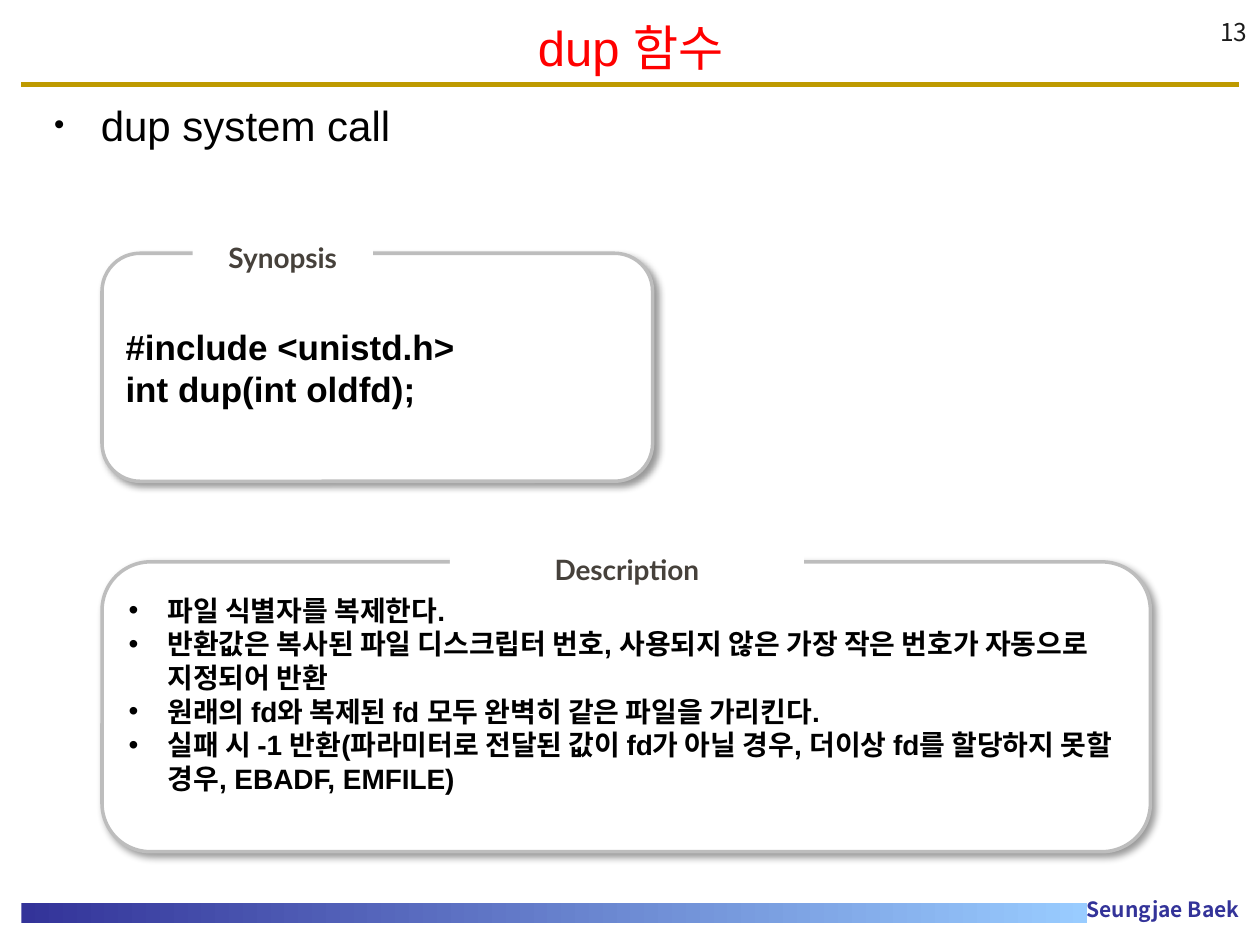
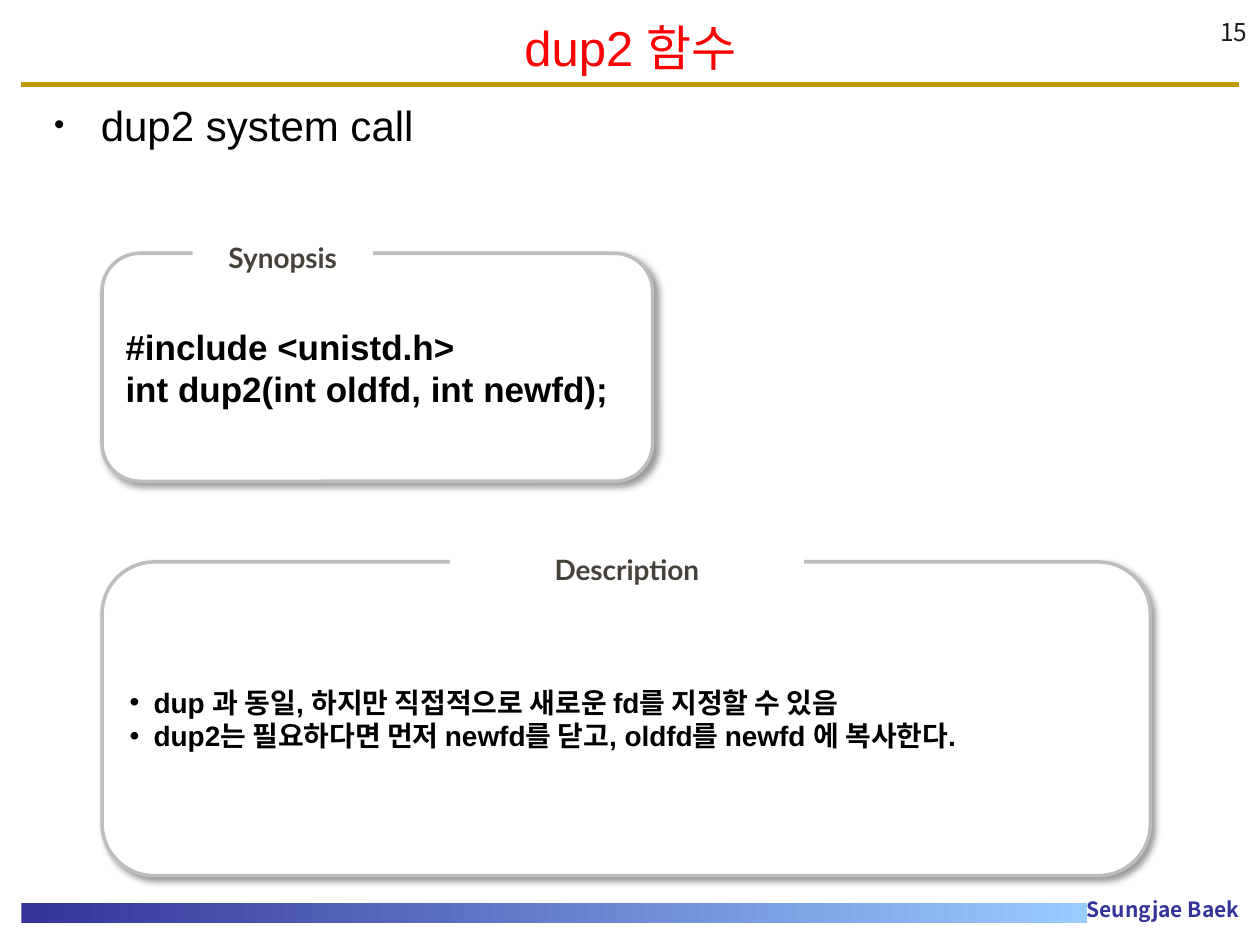
from lxml import etree
from pptx import Presentation
from pptx.dml.color import RGBColor
from pptx.enum.shapes import MSO_CONNECTOR, MSO_SHAPE
from pptx.enum.text import MSO_ANCHOR, MSO_AUTO_SIZE, PP_ALIGN
from pptx.oxml.ns import qn
from pptx.util import Inches, Pt

LINE = MSO_CONNECTOR.STRAIGHT
RECT, ROUND = MSO_SHAPE.RECTANGLE, MSO_SHAPE.ROUNDED_RECTANGLE
LEFT, CENTER, RIGHT = PP_ALIGN.LEFT, PP_ALIGN.CENTER, PP_ALIGN.RIGHT
TOP, MIDDLE, BOTTOM = MSO_ANCHOR.TOP, MSO_ANCHOR.MIDDLE, MSO_ANCHOR.BOTTOM
FIXED = MSO_AUTO_SIZE.NONE

WHITE = RGBColor(0xFF, 0xFF, 0xFF)
BLACK = RGBColor(0, 0, 0)
RED = RGBColor(0xFF, 0, 0)
GOLD = RGBColor(0xBE, 0x9A, 0)
NAVY = RGBColor(0x33, 0x33, 0x99)
SKY = RGBColor(0x99, 0xCC, 0xFF)
GREY = RGBColor(0xBD, 0xBD, 0xBD)
BROWN = RGBColor(0x46, 0x41, 0x3B)
INK = RGBColor(0x1C, 0x1C, 0x1C)

SANS, LATO, KOREAN = "Arial", "Lato", "Noto Sans CJK KR"

# Page data: title, number, topic, code, description, its indent,
# panel height and extra room below the description
PAGES = [
    ("dup 함수", "13", "dup system call",
     ["#include <unistd.h>", "int dup(int oldfd);"],
     ["파일 식별자를 복제한다.",
      "반환값은 복사된 파일 디스크립터 번호, 사용되지 않은 가장 작은 번호가 "
      "자동으로 지정되어 반환",
      "원래의 fd와 복제된 fd 모두 완벽히 같은 파일을 가리킨다.",
      "실패 시 -1 반환(파라미터로 전달된 값이 fd가 아닐 경우, 더이상 fd를 "
      "할당하지 못할 경우, EBADF, EMFILE)"],
     0.31, 2.3, 0.2),
    ("dup2 함수", "15", "dup2 system call",
     ["#include <unistd.h>", "int dup2(int oldfd, int newfd);"],
     ["dup 과 동일, 하지만 직접적으로 새로운 fd를 지정할 수 있음",
      "dup2는 필요하다면 먼저 newfd를 닫고, oldfd를 newfd 에 복사한다."],
     0.19, 2.49, 0),
]


def place(shape, box):
    shape.left, shape.top, shape.width, shape.height = map(Inches, box)


def add_bullet(para, indent, size=None):
    props = para._p.get_or_add_pPr()
    props.set("marL", str(Inches(indent)))
    props.set("indent", str(-Inches(indent)))
    if size:
        etree.SubElement(props, qn("a:buSzPct"), val=str(size * 1000))
    etree.SubElement(props, qn("a:buFont"), typeface=SANS)
    etree.SubElement(props, qn("a:buChar"), char="•")


def write(shape, lines, size, color, font=SANS, bold=False, align=LEFT,
          anchor=MIDDLE, indent=None, dot=None):
    frame = shape.text_frame
    frame.word_wrap = True
    frame.auto_size = FIXED
    frame.vertical_anchor = anchor
    frame.text = "\n".join(lines)
    for para in frame.paragraphs:
        para.alignment = align
        para.space_before = Pt(0)
        if indent:
            add_bullet(para, indent, dot)
        for run in para.runs:
            run.font.size = Pt(size)
            run.font.bold = bold
            run.font.color.rgb = color
            run.font.name = font
            etree.SubElement(run.font._element, qn("a:ea"), typeface=KOREAN)


def add_shadow(shape):
    effects = etree.SubElement(shape._element.spPr, qn("a:effectLst"))
    outer = etree.SubElement(
        effects, qn("a:outerShdw"), blurRad=str(Pt(4)), dist=str(Pt(3)),
        dir=str(45 * 60000), algn="tl", rotWithShape="0")
    tint = etree.SubElement(outer, qn("a:srgbClr"), val=str(BLACK))
    etree.SubElement(tint, qn("a:alpha"), val="40000")


def add_frame(slide, number):
    """Rule, footer band, author and page number."""
    rule = slide.shapes.add_connector(
        LINE, Inches(0.17), Inches(0.67), Inches(9.83), Inches(0.67))
    rule.line.color.rgb = GOLD
    rule.line.width = Pt(3)
    etree.SubElement(rule._element.spPr, qn("a:effectLst"))

    band = slide.shapes.add_shape(
        RECT, *map(Inches, (0.17, 7.17, 8.46, 0.16)))
    band.shadow.inherit = False
    band.line.fill.background()
    band.fill.gradient()
    band.fill.gradient_angle = 0
    for stop, color in zip(band.fill.gradient_stops, (NAVY, SKY)):
        stop.color.rgb = color

    author = slide.shapes.add_textbox(*map(Inches, (8.47, 7.07, 1.52, 0.3)))
    write(author, ["Seungjae Baek"], 12, NAVY, KOREAN, True, CENTER, TOP)
    page = slide.shapes.add_textbox(*map(Inches, (7.92, 0.17, 2.08, 0.25)))
    write(page, [number], 14, INK, KOREAN, align=RIGHT, anchor=BOTTOM)


def add_panel(slide, box, label, tab, lines, size, indent=None, room=0):
    """Rounded panel; tab gives the label's offset and width."""
    left, top, width, height = box
    panel = slide.shapes.add_shape(ROUND, *map(Inches, box))
    panel.fill.solid()
    panel.fill.fore_color.rgb = WHITE
    panel.line.color.rgb = GREY
    panel.line.width = Pt(2)
    add_shadow(panel)
    write(panel, lines, size, BLACK, bold=True, indent=indent)
    panel.text_frame.margin_bottom = Inches(0.05 + room)

    across, up, wide = tab
    head = slide.shapes.add_shape(
        RECT, *map(Inches, (left + across, top - up, wide, 0.37)))
    head.shadow.inherit = False
    head.fill.solid()
    head.fill.fore_color.rgb = WHITE
    head.line.fill.background()
    write(head, [label], 16, BROWN, LATO, True, CENTER)


def add_page(deck, title, number, topic, code, notes, indent, height, room):
    slide = deck.slides.add_slide(deck.slide_layouts[1])
    add_frame(slide, number)
    heading, body = slide.placeholders
    place(heading, (0.17, 0.08, 9.67, 0.58))
    write(heading, [title], 28, RED, align=CENTER)
    place(body, (0.33, 0.74, 9.41, 6.02))
    write(body, [topic], 24, BLACK, anchor=TOP, indent=0.37, dot=70)

    add_panel(slide, (0.81, 2.01, 4.37, 1.81), "Synopsis",
              (0.72, 0.15, 1.43), code, 20)
    add_panel(slide, (0.81, 4.46, 8.32, height), "Description",
              (2.76, 0.13, 2.81), notes, 16, indent, room)


def main():
    deck = Presentation()
    deck.slide_width, deck.slide_height = Inches(10), Inches(7.5)
    for page in PAGES:
        add_page(deck, *page)
    deck.save("out.pptx")


if __name__ == "__main__":
    main()
